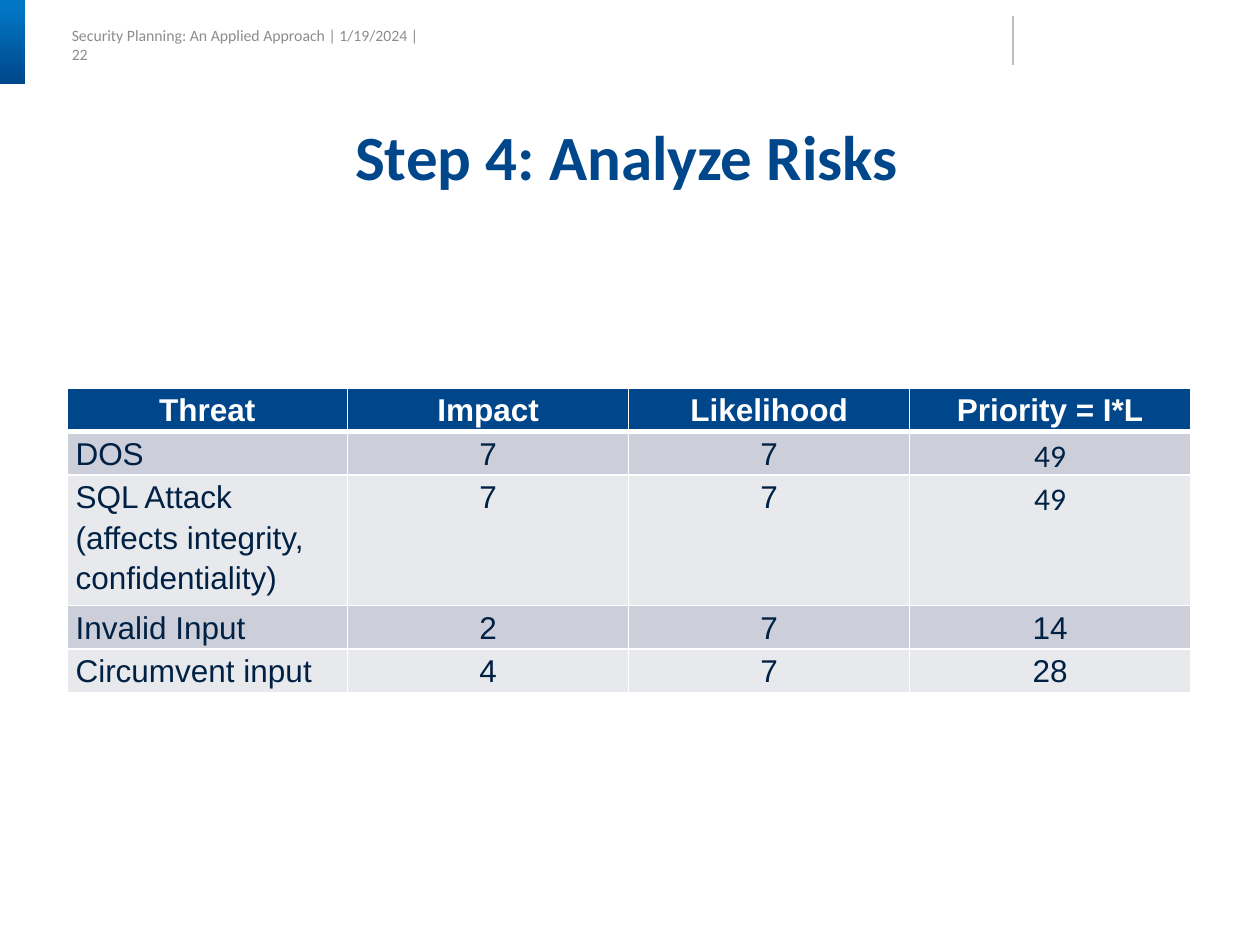
from lxml import etree
from pptx import Presentation
from pptx import util as u
from pptx.dml.color import RGBColor
from pptx.enum import shapes, text
from pptx.oxml import ns

HUES = {
    "navy": "00468A", "blue": "0176C3", "ink": "002143", "gray": "8C8C8C",
    "rule": "BFBFBF", "white": "FFFFFF", "dark": "CCCFDA", "light": "E7E9ED",
}
LEFT, MID = text.PP_ALIGN.LEFT, text.PP_ALIGN.CENTER


def hue(name):
    return RGBColor.from_string(HUES[name])


class Deck:
    """Holds the fonts and the slide being drawn."""
    head, body = "Calibri", "Arial"

    def __init__(self):
        self.prs = Presentation()
        self.prs.slide_width, self.prs.slide_height = u.Inches(10), u.Inches(7.5)
        self.slide = self.prs.slides.add_slide(self.prs.slide_layouts[6])

    def words(self, para, line, size, color, font, bold=False, align=LEFT, space=1):
        para.alignment, para.line_spacing = align, float(space)
        run = para.add_run()
        run.text = line
        run.font.size, run.font.name, run.font.bold = u.Pt(size), font, bold
        run.font.color.rgb = hue(color)

    def label(self, place, line, size, color, top=0, wrap=True,
              anchor=text.MSO_ANCHOR.TOP, **look):
        frame = self.slide.shapes.add_textbox(*map(u.Inches, place)).text_frame
        frame.margin_left = frame.margin_right = frame.margin_bottom = 0
        frame.margin_top = u.Inches(top)
        frame.word_wrap, frame.vertical_anchor = wrap, anchor
        self.words(frame.paragraphs[0], line, size, color, self.head, **look)

    def fade(self, place, start, end):
        """Draw a square-cornered bar that fades from top to bottom."""
        bar = self.slide.shapes.add_shape(
            shapes.MSO_SHAPE.ROUNDED_RECTANGLE, *map(u.Inches, place))
        bar.adjustments[0] = 0
        bar.shadow.inherit = False
        bar.line.fill.background()
        bar.fill.gradient()
        bar.fill.gradient_angle = 270
        for stop, spot, color in zip(bar.fill.gradient_stops, (0.1, 1), (start, end)):
            stop.position, stop.color.rgb = spot, hue(color)

    def rule(self, ends, color, width):
        line = self.slide.shapes.add_connector(
            shapes.MSO_CONNECTOR.STRAIGHT, *map(u.Inches, ends))
        line.line.color.rgb, line.line.width = hue(color), u.Pt(width)
        etree.SubElement(line._element.spPr, ns.qn("a:effectLst"))

    def edge(self, cell, widths):
        props = cell._tc.get_or_add_tcPr()
        for spot, (side, width) in enumerate(widths.items()):
            line = etree.Element(ns.qn(f"a:ln{side}"), w=str(int(u.Pt(width))))
            fill = etree.SubElement(line, ns.qn("a:solidFill"))
            etree.SubElement(fill, ns.qn("a:srgbClr"), val=HUES["white"])
            props.insert(spot, line)

    def cell(self, cell, lines, row, col, font):
        top = row == 0
        cell.margin_left = cell.margin_right = u.Inches(0.07)
        cell.margin_top = cell.margin_bottom = 0
        cell.fill.solid()
        cell.fill.fore_color.rgb = hue("navy" if top else "dark" if row % 2 else "light")
        self.edge(cell, {"L": 1, "R": 1, "T": 3 if row == 1 else 1, "B": 3 if top else 1})
        frame = cell.text_frame
        for num, line in enumerate(lines.split("\n")):
            para = frame.add_paragraph() if num else frame.paragraphs[0]
            self.words(para, line, 18, "white" if top else "ink", font, bold=top,
                       align=MID if top or col else LEFT, space=1.15)

    def table(self, place, highs, rows, odd):
        """Draw a banded table; cells with the text odd take the heading font."""
        grid = self.slide.shapes.add_table(
            len(rows), len(rows[0]), *map(u.Inches, place)).table
        for row, (high, items) in enumerate(zip(highs, rows)):
            grid.rows[row].height = u.Inches(high)
            for col, item in enumerate(items):
                font = self.head if item == odd else self.body
                self.cell(grid.cell(row, col), item, row, col, font)


def main():
    deck = Deck()
    deck.label((0.57, 0.23, 2.84, 0.23),
               "Security Planning: An Applied Approach | 1/19/2024 | 22",
               9, "gray", top=0.02, wrap=False, anchor=text.MSO_ANCHOR.MIDDLE)
    deck.fade((0, 0, 0.2, 0.67), "blue", "navy")
    deck.rule((8.04, 0.13, 8.04, 0.52), "rule", 0.75)
    deck.label((0.57, 1, 8.92, 0.55), "Step 4: Analyze Risks ", 36, "navy",
               bold=True, align=MID, space=0.9)
    threats = [
        ("DOS", 7, 7),
        ("SQL Attack\n(affects integrity, confidentiality)", 7, 7),
        ("Invalid Input", 2, 7),
        ("Circumvent input", 4, 7),
    ]
    rows = [("Threat", "Impact", "Likelihood", "Priority = I*L")]
    rows += [(name, str(hit), str(odds), str(hit * odds)) for name, hit, odds in threats]
    deck.table((0.53, 3.08, 8.92, 2.32), (0.33, 0.3, 0.41, 0.28, 0.31), rows, odd="49")
    deck.prs.save("out.pptx")


if __name__ == "__main__":
    main()
